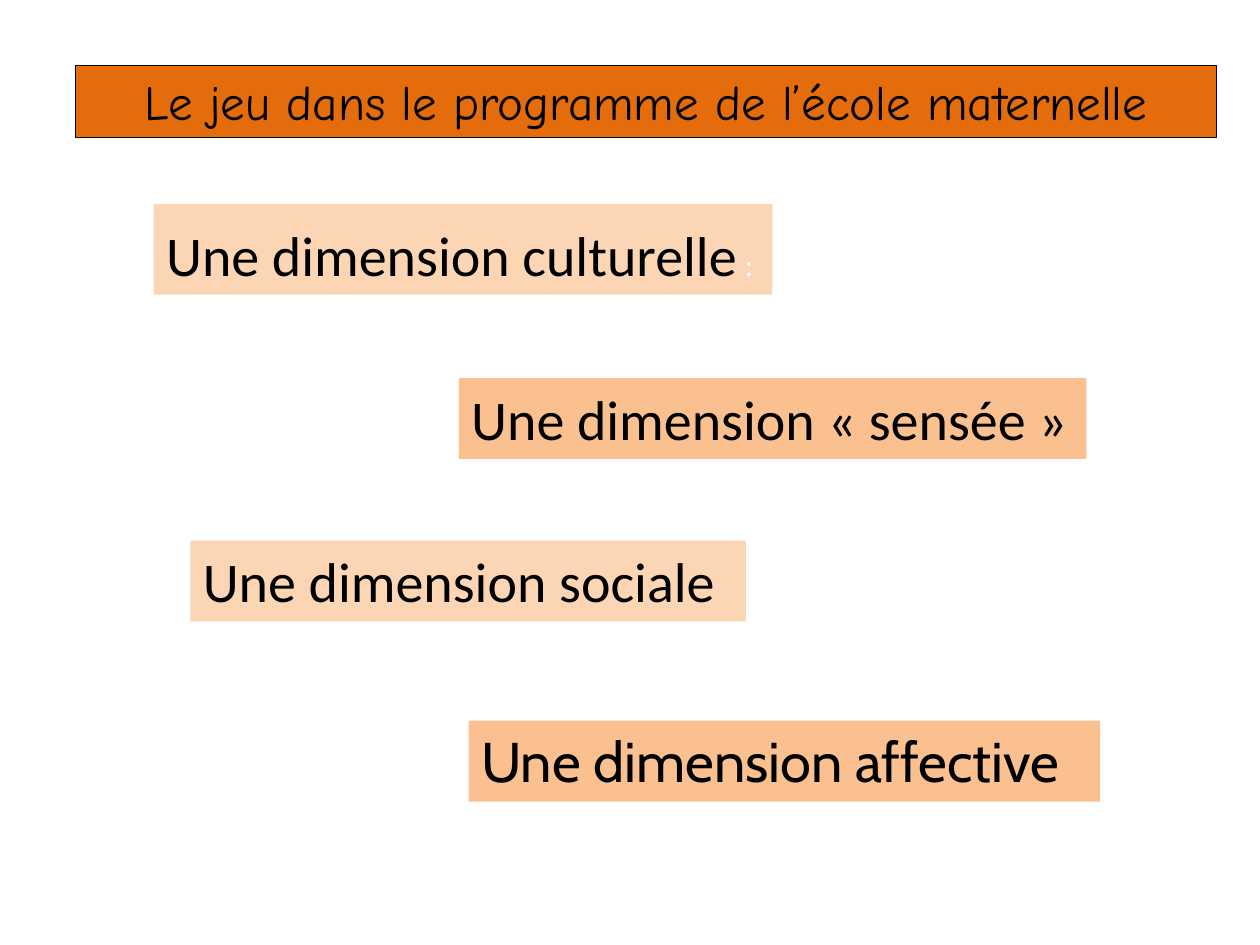
import pptx
import pptx.dml.color
import pptx.enum.text
import pptx.util

Cm = pptx.util.Cm
Pt = pptx.util.Pt


def color(value):
    return pptx.dml.color.RGBColor.from_string(value)


class DimensionSlide:
    """Holds the slide and the style of its title banner and dimension labels."""

    black = "000000"
    white = "FFFFFF"
    orange = "E46C0A"
    pale = "FCD5B5"
    peach = "FAC090"

    def __init__(self, presentation):
        self.slide = presentation.slides.add_slide(presentation.slide_layouts[6])

    def box(self, left, top, width, height, fill, wrap):
        shape = self.slide.shapes.add_textbox(Cm(left), Cm(top), Cm(width), Cm(height))
        shape.fill.solid()
        shape.fill.fore_color.rgb = color(fill)
        shape.text_frame.word_wrap = wrap
        shape.text_frame.auto_size = pptx.enum.text.MSO_AUTO_SIZE.SHAPE_TO_FIT_TEXT
        return shape

    def format(self, run, size, font, text_color):
        run.font.size = Pt(size)
        run.font.name = font
        run.font.color.rgb = color(text_color)

    def banner(self, text):
        shape = self.box(1.52, 1.32, 23.01, 1.45, self.orange, True)
        shape.line.color.rgb = color(self.black)
        shape.line.width = Pt(0.75)
        shape.text_frame.text = text
        paragraph = shape.text_frame.paragraphs[0]
        paragraph.alignment = pptx.enum.text.PP_ALIGN.CENTER
        self.format(paragraph.runs[0], 28, "Comic Neue", self.black)

    def label(self, text, left, top, width, fill, height=1.63, font="Calibri"):
        shape = self.box(left, top, width, height, fill, False)
        shape.text_frame.text = text
        paragraph = shape.text_frame.paragraphs[0]
        self.format(paragraph.runs[0], 32, font, self.black)
        return paragraph

    def suffix(self, paragraph, text, text_color):
        run = paragraph.add_run()
        run.text = text
        self.format(run, 18, "Calibri", text_color)


def main():
    presentation = pptx.Presentation()
    presentation.slide_width = Cm(25.4)
    presentation.slide_height = Cm(19.05)

    page = DimensionSlide(presentation)
    page.banner("Le jeu dans le programme de l’école maternelle")

    culture = page.label("Une dimension culturelle", 3.1, 4.11, 12.47, page.pale, height=1.83)
    culture.line_spacing = 1.15
    culture.space_after = Pt(10)
    page.suffix(culture, " ", page.black)
    page.suffix(culture, ":", page.white)

    page.label("Une dimension « sensée »", 9.25, 7.62, 12.65, page.peach)
    page.label("Une dimension sociale ", 3.84, 10.9, 11.2, page.pale)
    page.label("Une dimension affective  ", 9.45, 14.53, 12.73, page.peach, font="Cabin")

    presentation.save("out.pptx")


if __name__ == "__main__":
    main()
